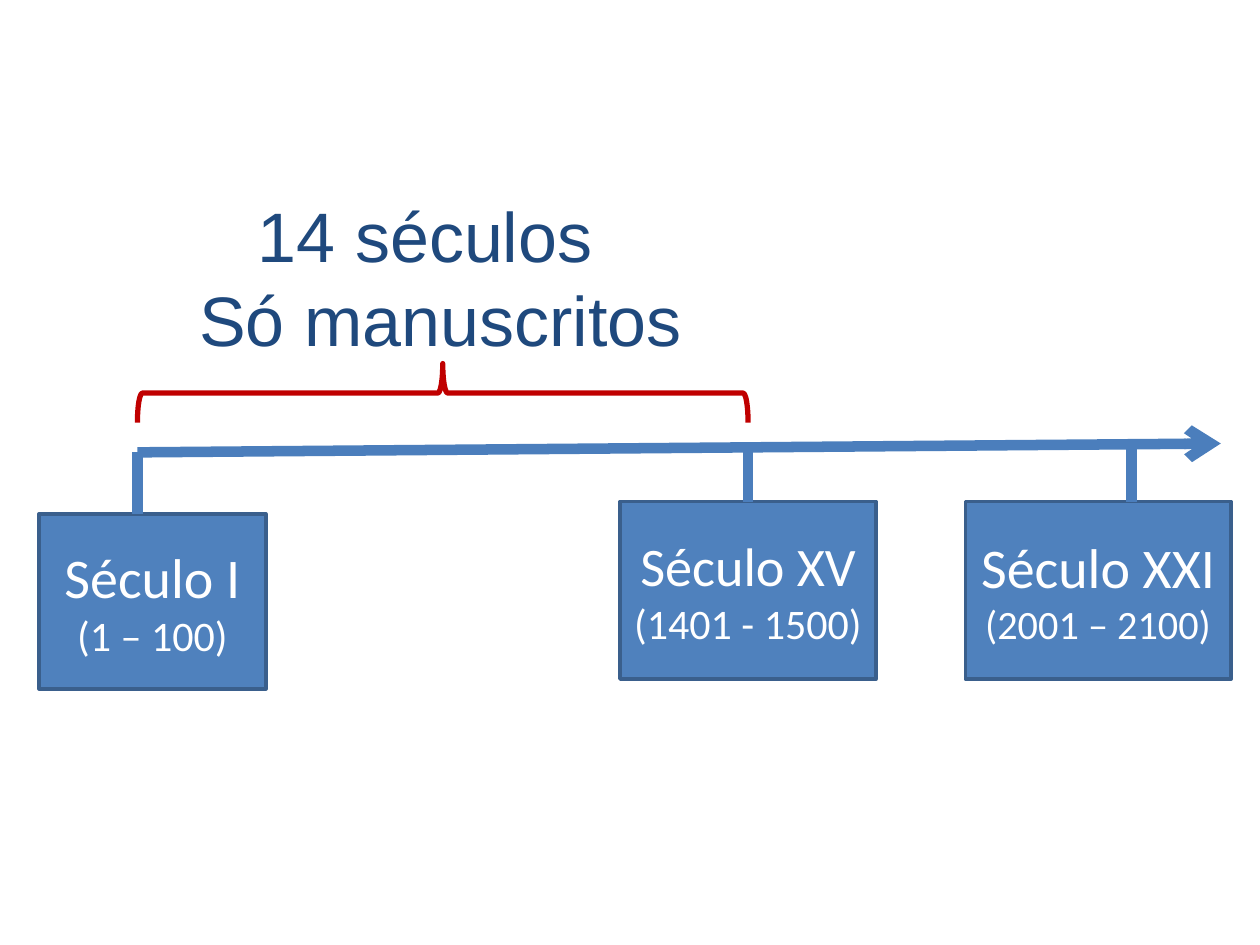
import pptx
import pptx.dml.color
import pptx.enum.shapes
import pptx.enum.text
import pptx.oxml.ns
import pptx.util
from lxml import etree

Cm, Pt = pptx.util.Cm, pptx.util.Pt
SHAPE = pptx.enum.shapes.MSO_SHAPE
ALIGN = pptx.enum.text.PP_ALIGN
ANCHOR = pptx.enum.text.MSO_ANCHOR

COLORS = {"axis": "4B7EBC", "box": "4F81BD", "border": "3A5F8C",
          "brace": "C00000", "heading": "1F497D", "white": "FFFFFF"}

# (century, its size), (years, their size), box in cm, tick x and top in cm
CENTURIES = [
    (("Século I", 32), ("(1 – 100)", 24), (0.79, 10.36, 4.57, 3.53), 2.77, 9.12),
    (("Século XV", 31), ("(1401 - 1500)", 24), (12.5, 10.11, 5.16, 3.58), 15.08, 8.94),
    (("Século XXI", 32), ("(2001 – 2100)", 23), (19.46, 10.11, 5.36, 3.58), 22.81, 8.94),
]
# text, left indent in cm
HEADING = [("14 séculos", 1.57), ("Só manuscritos", 0.39)]
AXIS = (2.77, 9.12, 24.61, 8.94)
BRACE_TOP, BRACE_DEPTH = 7.33, 1.19


def rgb(name):
    return pptx.dml.color.RGBColor.from_string(COLORS[name])


def add_text(frame, text, size, font, color, align=ALIGN.LEFT, indent=0):
    """Fill the empty first paragraph of the frame, or append a new one."""
    para = frame.paragraphs[0]
    if para.runs:
        para = frame.add_paragraph()
    para.alignment = align
    if indent:
        para._p.get_or_add_pPr().set("marL", str(Cm(indent)))
    span = para.add_run()
    span.text = text
    span.font.size = Pt(size)
    span.font.name = font
    span.font.color.rgb = rgb(color)


def add_shape(page, kind, place, fill, line, width):
    shape = page.shapes.add_shape(kind, *[Cm(value) for value in place])
    shape.shadow.inherit = False
    shape.fill.solid()
    shape.fill.fore_color.rgb = rgb(fill)
    shape.line.color.rgb = rgb(line)
    shape.line.width = Pt(width)
    return shape


def add_line(page, *ends):
    line = page.shapes.add_connector(pptx.enum.shapes.MSO_CONNECTOR.STRAIGHT,
                                     *[Cm(value) for value in ends])
    line.line.color.rgb = rgb("axis")
    line.line.width = Pt(6)
    etree.SubElement(line._element.spPr, pptx.oxml.ns.qn("a:effectLst"))
    return line


def add_century(page, century, years, place, tick_x, tick_top):
    box = add_shape(page, SHAPE.RECTANGLE, place, "box", "border", 2)
    frame = box.text_frame
    frame.word_wrap = True
    frame.vertical_anchor = ANCHOR.MIDDLE
    for text, size in (century, years):
        add_text(frame, text, size, "Calibri", "white", ALIGN.CENTER)
    left, top, width, _ = place
    tick = add_line(page, tick_x, tick_top, tick_x, top)
    if abs(left + width / 2 - tick_x) < 0.05:
        tick.end_connect(box, 0)


def add_brace(page, start, end):
    """Turn a left brace so that it spans start to end and points upward."""
    span = end - start
    left = (start + end - BRACE_DEPTH) / 2
    top = BRACE_TOP + (BRACE_DEPTH - span) / 2
    brace = add_shape(page, SHAPE.LEFT_BRACE, (left, top, BRACE_DEPTH, span),
                      "white", "brace", 3)
    brace.rotation = 90


def add_heading(page):
    box = page.shapes.add_textbox(Cm(3.38), Cm(3.76), Cm(10.74), Cm(3.68))
    frame = box.text_frame
    frame.word_wrap = False
    frame.auto_size = pptx.enum.text.MSO_AUTO_SIZE.SHAPE_TO_FIT_TEXT
    for text, indent in HEADING:
        add_text(frame, text, 40, "Arial", "heading", indent=indent)


def main():
    deck = pptx.Presentation()
    deck.slide_width, deck.slide_height = Cm(25.4), Cm(19.05)
    page = deck.slides.add_slide(deck.slide_layouts[6])

    axis = add_line(page, *AXIS)
    etree.SubElement(axis.line._get_or_add_ln(), pptx.oxml.ns.qn("a:tailEnd"), type="arrow")
    for century in CENTURIES:
        add_century(page, *century)
    add_brace(page, CENTURIES[0][3], CENTURIES[1][3])
    add_heading(page)
    deck.save("out.pptx")


if __name__ == "__main__":
    main()
